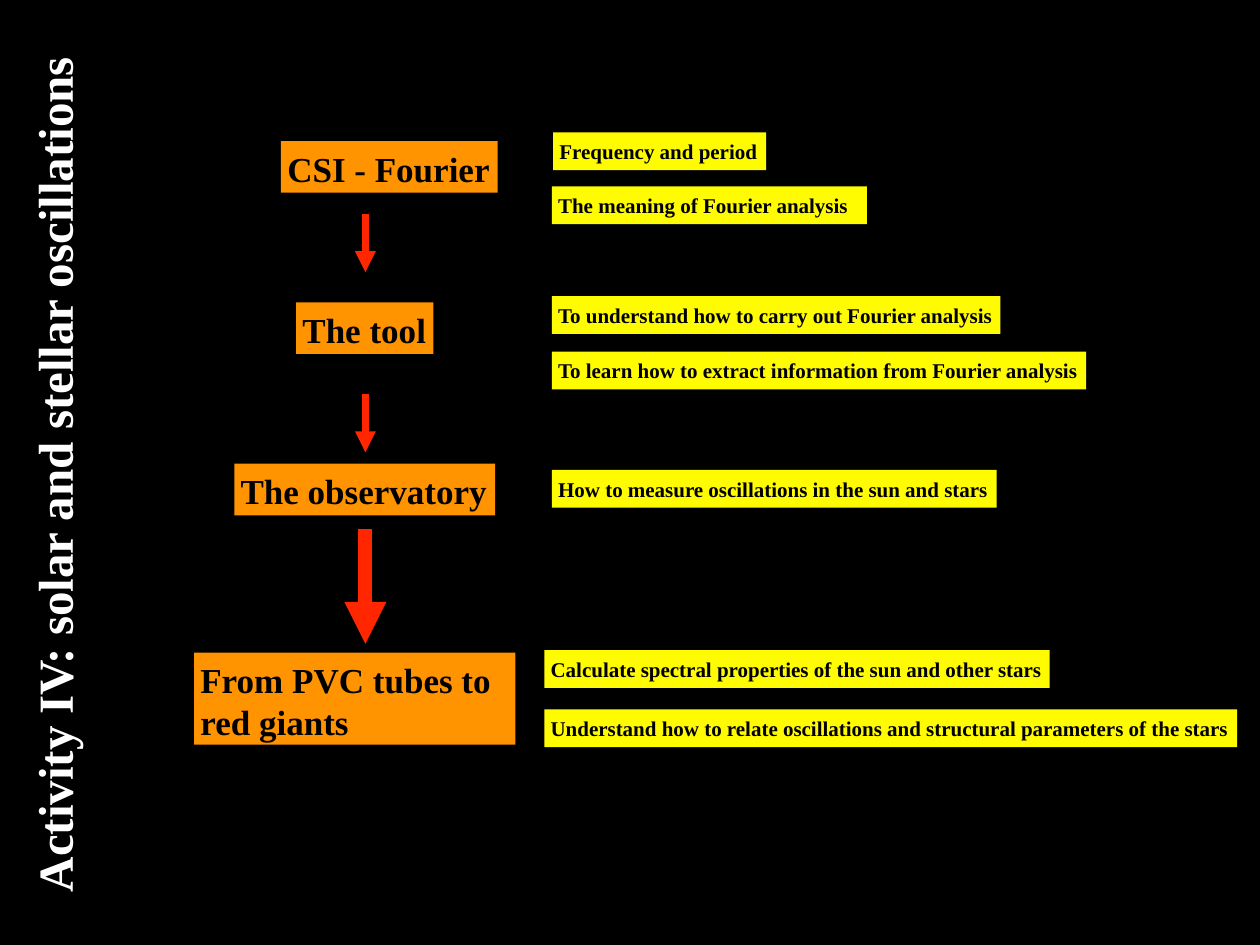
from dataclasses import dataclass

from lxml import etree
from pptx import Presentation
from pptx.dml.color import RGBColor
from pptx.enum.shapes import MSO_CONNECTOR, MSO_SHAPE
from pptx.enum.text import MSO_ANCHOR, MSO_AUTO_SIZE, PP_ALIGN
from pptx.oxml.ns import qn
from pptx.util import Inches, Pt

RECT = MSO_SHAPE.RECTANGLE
STRAIGHT = MSO_CONNECTOR.STRAIGHT
TOP = MSO_ANCHOR.TOP
FIT_SHAPE = MSO_AUTO_SIZE.SHAPE_TO_FIT_TEXT
LEFT = PP_ALIGN.LEFT

COL = ROW = Inches(1)  # the slide is 10 columns by 7.5 rows
FONT = "Times New Roman"
BLACK, WHITE = "000000", "FFFFFF"
ORANGE, YELLOW, RED = "FF9300", "FFFB00", "FF2600"
ARROW_COL = 2.9
STAGE_HEIGHT, STAGE_LINE, GOAL_HEIGHT = 0.41, 0.32, 0.3


@dataclass
class Label:
    """A filled box; each line of text is its own paragraph."""
    lines: list[str]
    col: float
    row: float
    cols: float
    wrap: bool = False


@dataclass
class Arrow:
    start: float
    end: float
    weight: float


STAGES = [
    Label(["CSI - Fourier"], 2.23, 1.12, 1.72),
    Label(["The tool"], 2.35, 2.4, 1.09),
    Label(["The observatory"], 1.86, 3.68, 2.07),
    Label(["From PVC tubes to", "red giants"], 1.54, 5.18, 2.55),
]
GOALS = [
    Label(["Frequency and period"], 4.39, 1.05, 1.69),
    Label(["The meaning of Fourier analysis"], 4.38, 1.48, 2.5, wrap=True),
    Label(["To understand how to carry out Fourier analysis"], 4.38, 2.35, 3.56),
    Label(["To learn how to extract information from Fourier analysis"],
          4.38, 2.79, 4.24),
    Label(["How to measure oscillations in the sun and stars"],
          4.38, 3.73, 3.53),
    Label(["Calculate spectral properties of the sun and other stars"],
          4.32, 5.16, 4.01),
    Label(["Understand how to relate oscillations and structural parameters "
           "of the stars"], 4.32, 5.63, 5.5),
]
ARROWS = [Arrow(1.7, 2.16, 4), Arrow(3.13, 3.59, 4), Arrow(4.2, 5.11, 8)]


def rgb(colour: str) -> RGBColor:
    return RGBColor.from_string(colour)


def write(sp, lines: list[str], size: float, colour: str,
          wrap: bool = False) -> None:
    tf = sp.text_frame
    tf.word_wrap = wrap
    tf.auto_size = FIT_SHAPE
    tf.vertical_anchor = TOP
    tf.margin_left = tf.margin_right = Inches(0.05)
    tf.margin_top = tf.margin_bottom = Inches(0.05)
    for i, line in enumerate(lines):
        p = tf.add_paragraph() if i else tf.paragraphs[0]
        p.alignment = LEFT
        p.line_spacing = 1.0
        p.space_before = Pt(0)
        r = p.add_run()
        r.text = line
        r.font.name, r.font.size, r.font.bold = FONT, Pt(size), True
        r.font.color.rgb = rgb(colour)


def draw_label(s, label: Label, rows: float, fill: str, size: float) -> None:
    sp = s.shapes.add_shape(RECT, int(label.col * COL), int(label.row * ROW),
                            int(label.cols * COL), int(rows * ROW))
    sp.shadow.inherit = False
    sp.fill.solid()
    sp.fill.fore_color.rgb = rgb(fill)
    sp.line.fill.background()
    write(sp, label.lines, size, BLACK, label.wrap)


def draw_arrow(s, arrow: Arrow) -> None:
    x = int(ARROW_COL * COL)
    cn = s.shapes.add_connector(STRAIGHT, x, int(arrow.start * ROW),
                                x, int(arrow.end * ROW))
    cn.line.color.rgb = rgb(RED)
    cn.line.width = Pt(arrow.weight)
    etree.SubElement(cn.line._get_or_add_ln(), qn("a:tailEnd"), type="triangle")
    etree.SubElement(cn._element.spPr, qn("a:effectLst"))


def draw_title(s, text: str) -> None:
    title = s.shapes.title
    title.left, title.top = int(-2.97 * COL), int(3.49 * ROW)
    title.width, title.height = int(6.75 * COL), int(0.53 * ROW)
    title.rotation = 270
    write(title, [text], 28, WHITE)


def main() -> None:
    prs = Presentation()
    prs.slide_width, prs.slide_height = int(10 * COL), int(7.5 * ROW)
    s = prs.slides.add_slide(prs.slide_layouts.get_by_name("Title Only"))
    s.background.fill.solid()
    s.background.fill.fore_color.rgb = rgb(BLACK)

    draw_title(s, "Activity IV: solar and stellar oscillations")
    for stage in STAGES:
        rows = STAGE_HEIGHT + STAGE_LINE * (len(stage.lines) - 1)
        draw_label(s, stage, rows, ORANGE, 20)
    for goal in GOALS:
        draw_label(s, goal, GOAL_HEIGHT, YELLOW, 12)
    for arrow in ARROWS:
        draw_arrow(s, arrow)
    prs.save("out.pptx")


if __name__ == "__main__":
    main()
